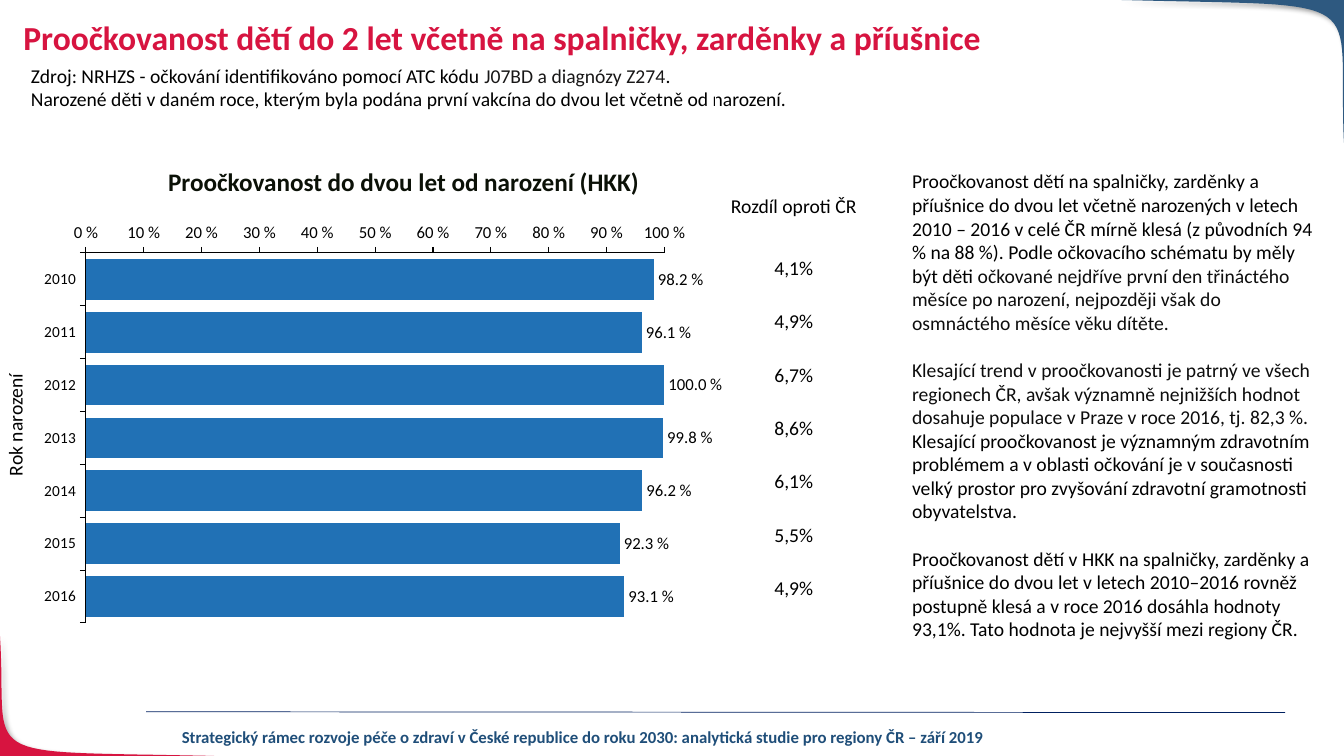
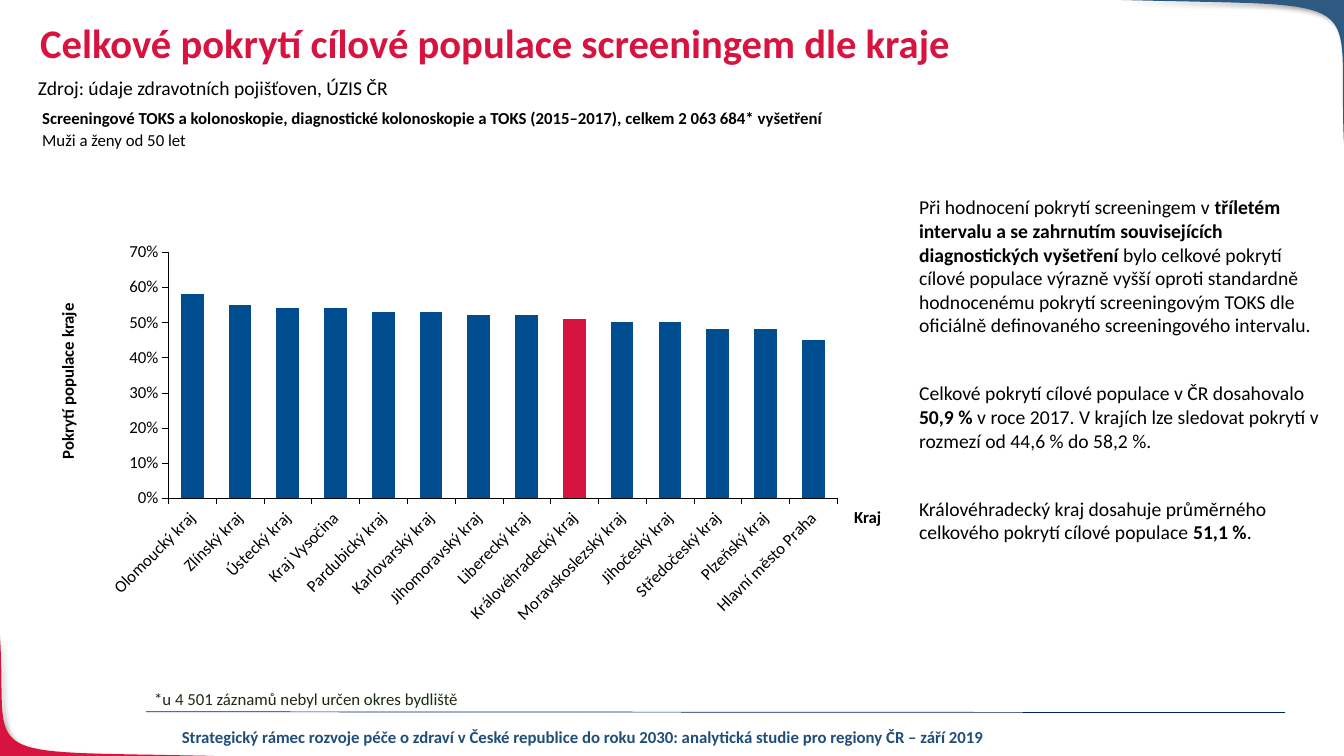
from typing import NamedTuple

from lxml.etree import SubElement
from pptx import Presentation
from pptx.chart.data import CategoryChartData
from pptx.dml.color import RGBColor
from pptx.enum.chart import XL_CHART_TYPE as ChartType
from pptx.enum.chart import XL_LABEL_POSITION as LabelPosition
from pptx.enum.chart import XL_TICK_MARK as TickMark
from pptx.enum.shapes import MSO_CONNECTOR as Connector
from pptx.enum.text import MSO_ANCHOR as Anchor
from pptx.enum.text import MSO_AUTO_SIZE as AutoSize
from pptx.enum.text import PP_ALIGN as Align
from pptx.oxml.ns import qn
from pptx.util import Pt

FONT = "Calibri"
WIDTH, HEIGHT = 960, 540
RED = RGBColor(0xD7, 0x14, 0x40)
CORNER_BLUE = RGBColor(0x2E, 0x59, 0x80)
FOOTER_BLUE = RGBColor(0x1F, 0x4E, 0x79)
RULE_BLUE = RGBColor(0x00, 0x20, 0x60)
COVERAGE_BLUE = RGBColor(0x21, 0x71, 0xB5)
REGION_BLUE = RGBColor(0x00, 0x4E, 0x8F)
BLACK = RGBColor(0x00, 0x00, 0x00)
SOFT_BLACK = RGBColor(0x0D, 0x0D, 0x0D)
CODE_BLACK = RGBColor(0x18, 0x17, 0x17)
HEADING_BLACK = RGBColor(0x0B, 0x11, 0x07)
NOTE_GREEN = RGBColor(0x1C, 0x2B, 0x12)

COVERAGE = {
    "2010": (0.982, "4,1%"), "2011": (0.961, "4,9%"), "2012": (1, "6,7%"),
    "2013": (0.998, "8,6%"), "2014": (0.962, "6,1%"), "2015": (0.923, "5,5%"),
    "2016": (0.931, "4,9%"),
}
HOME_REGION = "Královéhradecký kraj"
SCREENING = {
    "Olomoucký kraj": 0.58, "Zlínský kraj": 0.55, "Ústecký kraj": 0.54,
    "Kraj Vysočina": 0.54, "Pardubický kraj": 0.53, "Karlovarský kraj": 0.53,
    "Jihomoravský kraj": 0.52, "Liberecký kraj": 0.52, HOME_REGION: 0.51,
    "Moravskoslezský kraj": 0.5, "Jihočeský kraj": 0.5,
    "Středočeský kraj": 0.48, "Plzeňský kraj": 0.48, "Hlavní město Praha": 0.45,
}


class Box(NamedTuple):
    """A region in points."""
    left: float
    top: float
    width: float
    height: float

    def inner(self, left, top, width, height):
        return Box(self.left + left, self.top + top, width, height)

    def lengths(self):
        return [Pt(length) for length in self]


class Span(NamedTuple):
    text: str
    bold: bool = False
    color: RGBColor = BLACK


class Para(NamedTuple):
    spans: list
    before: float = 0


def style_font(font, size, color=BLACK, bold=False):
    font.name, font.size, font.bold = FONT, Pt(size), bold
    font.color.rgb = color


def write(frame, paras, size, align=Align.LEFT):
    for index, para in enumerate(paras):
        paragraph = frame.add_paragraph() if index else frame.paragraphs[0]
        paragraph.alignment = align
        if para.before:
            paragraph.space_before = Pt(para.before)
        for span in para.spans:
            run = paragraph.add_run()
            run.text = span.text
            style_font(run.font, size, span.color, span.bold)


def add_text(page, box, paras, size, align=Align.LEFT):
    shape = page.shapes.add_textbox(*box.lengths())
    shape.text_frame.word_wrap = True
    write(shape.text_frame, paras, size, align)
    return shape


def add_line_of_text(page, box, text, size, align=Align.LEFT, **look):
    return add_text(page, box, [Para([Span(text, **look)])], size, align)


def add_side_label(page, box, text, size, bold=False):
    """Text reading upwards, centred in the box as it is seen."""
    shift = (box.width - box.height) / 2
    flat = box.inner(shift, -shift, box.height, box.width)
    shape = add_line_of_text(page, flat, text, size, Align.CENTER, bold=bold)
    shape.text_frame.vertical_anchor = Anchor.MIDDLE
    shape.rotation = 270


def add_title(page, box, text, size):
    title = page.shapes.title
    title.left, title.top, title.width, title.height = box.lengths()
    frame = title.text_frame
    frame.auto_size, frame.vertical_anchor = AutoSize.NONE, Anchor.TOP
    write(frame, [Para([Span(text, True, RED)])], size)
    frame.paragraphs[0].line_spacing = 0.9


def add_corner(page, curve, corner, color, steps=32):
    """Fill between a cubic curve and the slide corner it rounds off."""
    points = []
    for step in range(steps + 1):
        t = step / steps
        weights = ((1 - t) ** 3, 3 * t * (1 - t) ** 2, 3 * t * t * (1 - t), t ** 3)
        x, y = (sum(w * value for w, value in zip(weights, axis)) for axis in zip(*curve))
        points.append((Pt(min(max(x, 0), WIDTH)), Pt(min(max(y, 0), HEIGHT))))
    points.append((Pt(corner[0]), Pt(corner[1])))
    builder = page.shapes.build_freeform(*points[0], scale=1.0)
    builder.add_line_segments(points[1:], close=True)
    shape = builder.convert_to_shape()
    shape.fill.solid()
    shape.fill.fore_color.rgb = color
    shape.line.fill.background()
    shape.shadow.inherit = False
    shadow = SubElement(shape.element.spPr.find(qn("a:effectLst")), qn("a:outerShdw"),
                        blurRad=str(Pt(4)), dist=str(Pt(3)), dir="2700000")
    shade = SubElement(shadow, qn("a:srgbClr"), val=str(BLACK))
    SubElement(shade, qn("a:alpha"), val="40000")
    return shape


def dress_layout(layout, page):
    """Draw the shared frame on a page and move it to the layout."""
    for holder in list(layout.placeholders):
        if holder.placeholder_format.idx:
            layout.shapes.element.remove(holder.element)
    rule = page.shapes.add_connector(Connector.STRAIGHT, Pt(104.4), Pt(508.4), Pt(918), Pt(509))
    rule.line.color.rgb, rule.line.width = RULE_BLUE, Pt(0.5)
    SubElement(rule.element.spPr, qn("a:effectLst"))
    frame_shapes = [
        add_corner(page, [(153, 540), (-24, 536), (6, 546), (0, 454)], (0, HEIGHT), RED),
        add_corner(page, [(800, 0), (986, 5), (955, -7), (960, 102)], (WIDTH, 0), CORNER_BLUE),
        rule,
        add_line_of_text(
            page, Box(113, 515.5, 607, 22),
            "Strategický rámec rozvoje péče o zdraví v České republice do roku 2030: "
            "analytická studie pro regiony ČR – září 2019",
            12, Align.CENTER, bold=True, color=FOOTER_BLUE),
    ]
    for shape in frame_shapes:
        layout.shapes.element.append(shape.element)


def set_plot_area(chart, fractions):
    plot_area = chart.element.xpath(".//c:plotArea")[0]
    for old in plot_area.findall(qn("c:layout")):
        plot_area.remove(old)
    layout = SubElement(plot_area, qn("c:layout"))
    plot_area.insert(0, layout)
    manual = SubElement(layout, qn("c:manualLayout"))
    settings = [("layoutTarget", "inner"), ("xMode", "edge"), ("yMode", "edge")]
    for name, value in settings + list(zip("xywh", fractions)):
        SubElement(manual, qn(f"c:{name}"), val=str(value))


def add_bars(page, box, kind, values, color, gap, top_value, number_format,
             line_width, category_size, plot_area):
    data = CategoryChartData()
    data.categories = list(values)
    data.add_series("Series 1", list(values.values()))
    chart = page.shapes.add_chart(kind, *box.lengths(), data).chart
    chart.has_legend = chart.has_title = False
    style_font(chart.font, 12)
    for axis, size in ((chart.category_axis, category_size), (chart.value_axis, 12)):
        axis.has_major_gridlines = False
        axis.major_tick_mark, axis.minor_tick_mark = TickMark.OUTSIDE, TickMark.NONE
        axis.format.line.color.rgb, axis.format.line.width = BLACK, Pt(line_width)
        style_font(axis.tick_labels.font, size)
    scale = chart.value_axis
    scale.minimum_scale, scale.maximum_scale, scale.major_unit = 0, top_value, 0.1
    scale.tick_labels.number_format = number_format
    scale.tick_labels.number_format_is_linked = False
    plot = chart.plots[0]
    plot.gap_width, plot.vary_by_categories = gap, False
    fill = plot.series[0].format.fill
    fill.solid()
    fill.fore_color.rgb = color
    set_plot_area(chart, plot_area)
    return chart


def add_difference_table(page, box, header, values, header_height):
    table = page.shapes.add_table(len(values) + 1, 1, *box.lengths()).table
    table.first_row = table.horz_banding = False
    row_height = (box.height - header_height) / len(values)
    for index, text in enumerate([header, *values]):
        table.rows[index].height = Pt(row_height if index else header_height)
        cell = table.cell(index, 0)
        cell.fill.background()
        cell.margin_left = cell.margin_right = cell.margin_top = Pt(0.7)
        cell.margin_bottom = Pt(0 if index else 16)
        cell.vertical_anchor = Anchor.MIDDLE if index else Anchor.BOTTOM
        write(cell.text_frame, [Para([Span(text)])], 14, Align.CENTER)


def add_coverage_panel(page, box):
    add_difference_table(page, box.inner(511, 0, 112, 377), "Rozdíl oproti ČR",
                         [difference for _, difference in COVERAGE.values()], 110)
    shares = {year: share for year, (share, _) in COVERAGE.items()}
    chart = add_bars(page, box.inner(22, 91.5, 494, 297), ChartType.BAR_CLUSTERED, shares,
                     COVERAGE_BLUE, 30, 1, "0\\ %", 0.75, 11, (0.08, 0.09, 0.84, 0.89))
    chart.category_axis.reverse_order = True
    plot = chart.plots[0]
    plot.overlap = 100
    plot.has_data_labels = True
    labels = plot.data_labels
    labels.show_value, labels.position = True, LabelPosition.OUTSIDE_END
    labels.number_format, labels.number_format_is_linked = "0.0\\ %", False
    style_font(labels.font, 12)
    add_side_label(page, box.inner(0, 186, 21, 110), "Rok narození", 14)
    add_line_of_text(page, box.inner(113, 52.5, 380, 29),
                     "Proočkovanost do dvou let od narození (HKK)", 18,
                     bold=True, color=HEADING_BLACK)


def add_screening_panel(page, box):
    chart = add_bars(page, box.inner(34, 0, 546, 322), ChartType.COLUMN_CLUSTERED, SCREENING,
                     REGION_BLUE, 110, 0.7, "0%", 0.25, 12, (0.103, 0.094, 0.875, 0.546))
    chart.element.xpath(".//c:catAx/c:txPr/a:bodyPr")[0].set("rot", "-2700000")
    home = chart.plots[0].series[0].points[list(SCREENING).index(HOME_REGION)]
    home.format.fill.solid()
    home.format.fill.fore_color.rgb = RED
    add_line_of_text(page, box.inner(573, 208.5, 78, 20), "Kraj", 12, bold=True)
    add_side_label(page, box.inner(5, 45, 26, 155), "Pokrytí populace kraje", 12, bold=True)
    add_line_of_text(page, box.inner(73, 338.5, 302, 22),
                     "*u 4 501 záznamů nebyl určen okres bydliště", 12, color=NOTE_GREEN)


def build_vaccination_page(page):
    add_title(page, Box(9.5, 11.5, 849, 50),
              "Proočkovanost dětí do 2 let včetně na spalničky, zarděnky a příušnice", 24)
    add_text(page, Box(15, 42, 580, 41), [
        Para([Span("Zdroj: NRHZS - očkování identifikováno pomocí ATC kódu "),
              Span("J07BD a diagnózy Z274", color=CODE_BLACK), Span(".")]),
        Para([Span("Narozené děti v daném roce, kterým byla podána první vakcína "
                   "do dvou let včetně od narození.")]),
    ], 14)
    add_text(page, Box(644.4, 117.4, 301, 351), [
        Para([Span("Proočkovanost dětí na spalničky, zarděnky a")]),
        Para([Span("příušnice do dvou let včetně narozených v letech 2010 – 2016 v celé ČR "
                   "mírně klesá (z původních 94 % na 88 %). Podle očkovacího schématu "
                   "by měly být děti "),
              Span("očkované nejdříve první den třináctého měsíce po narození, nejpozději "
                   "však do osmnáctého měsíce věku dítěte.", color=SOFT_BLACK)]),
        Para([Span("Klesající trend v proočkovanosti je patrný ve všech regionech ČR, avšak "
                   "významně nejnižších hodnot dosahuje populace v Praze v roce 2016, "
                   "tj. 82,3 %.", color=SOFT_BLACK)], 17),
        Para([Span("Klesající proočkovanost je významným zdravotním problémem a v oblasti "
                   "očkování je v současnosti velký prostor pro zvyšování zdravotní "
                   "gramotnosti obyvatelstva.")]),
        Para([Span("Proočkovanost dětí v HKK na spalničky, zarděnky a příušnice do dvou let "
                   "v letech 2010–2016 rovněž postupně klesá a v roce 2016 dosáhla hodnoty "
                   "93,1%. Tato hodnota je nejvyšší mezi regiony ČR.")], 17),
    ], 14)
    add_coverage_panel(page, Box(0, 62.5, 623, 389))


def build_screening_page(page):
    add_title(page, Box(21.5, 13, 828, 50),
              "Celkové pokrytí cílové populace screeningem dle kraje", 29)
    add_line_of_text(page, Box(20, 51, 610, 24),
                     "Zdroj: údaje zdravotních pojišťoven, ÚZIS ČR", 14)
    add_text(page, Box(23, 73.5, 586, 36), [
        Para([Span("Screeningové TOKS a kolonoskopie, diagnostické kolonoskopie a TOKS "
                   "(2015–2017), celkem 2 063 684* vyšetření", True)]),
        Para([Span("Muži a ženy od 50 let")], 1),
    ], 12)
    add_screening_panel(page, Box(30, 149.8, 651, 361))
    add_text(page, Box(649.4, 136, 301, 281), [
        Para([Span("Při hodnocení pokrytí screeningem v "),
              Span("tříletém intervalu a se zahrnutím souvisejících diagnostických "
                   "vyšetření ", True),
              Span("bylo celkové pokrytí cílové populace výrazně vyšší oproti standardně "
                   "hodnocenému pokrytí screeningovým TOKS dle oficiálně definovaného "
                   "screeningového intervalu.")]),
        Para([Span("Celkové pokrytí cílové populace v ČR dosahovalo "), Span("50,9 %", True),
              Span(" v roce 2017. V krajích lze sledovat pokrytí v rozmezí "
                   "od 44,6 % do 58,2 %.")], 32),
        Para([Span("Královéhradecký kraj dosahuje průměrného celkového pokrytí cílové "
                   "populace "), Span("51,1 %", True), Span(".")], 32),
    ], 14)


def main():
    deck = Presentation()
    deck.slide_width, deck.slide_height = Pt(WIDTH), Pt(HEIGHT)
    layout = deck.slide_layouts[5]
    pages = [deck.slides.add_slide(layout) for _ in range(2)]
    dress_layout(layout, pages[0])
    build_vaccination_page(pages[0])
    build_screening_page(pages[1])
    deck.save("out.pptx")


if __name__ == "__main__":
    main()
